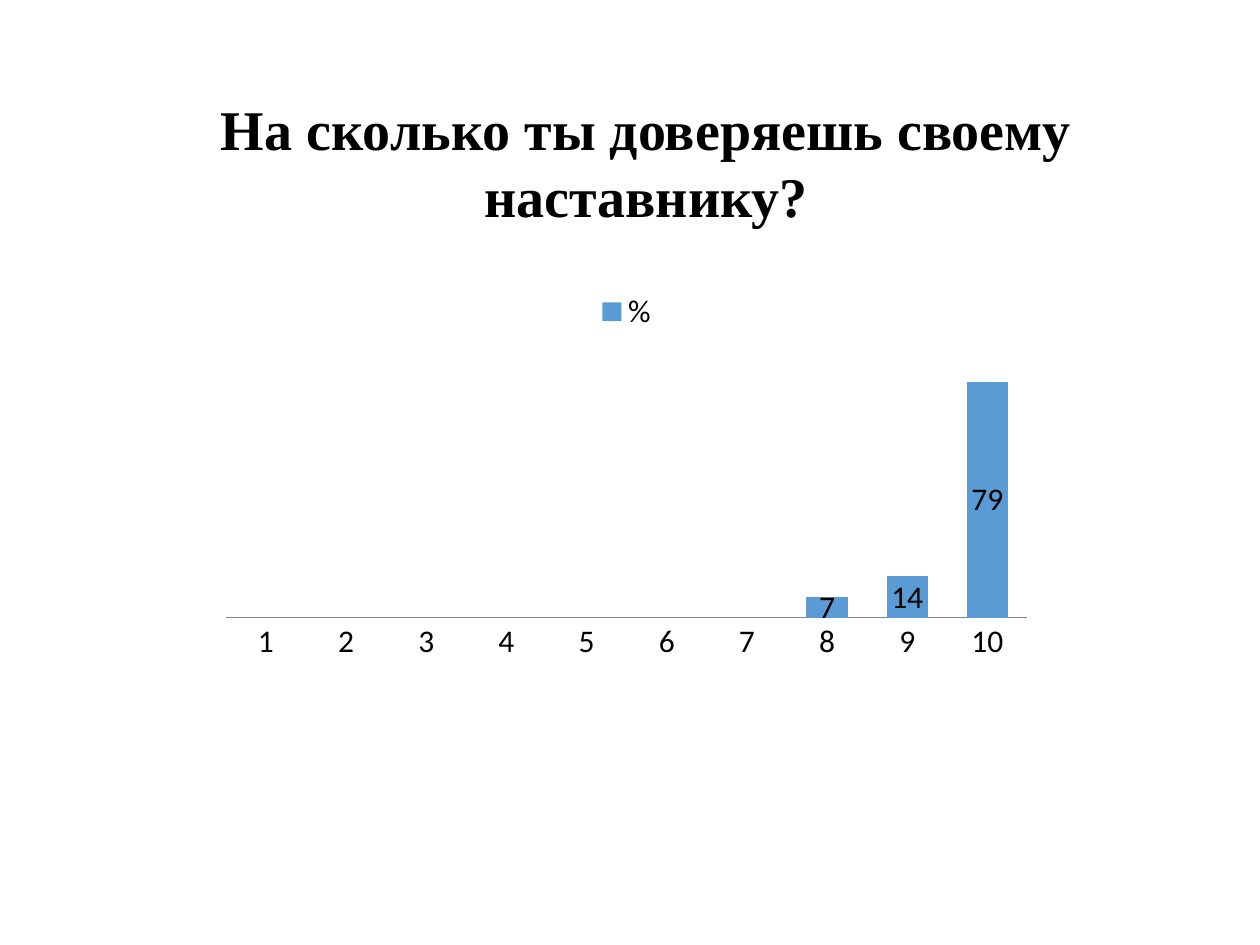
from dataclasses import dataclass

import lxml.etree
import pptx
import pptx.chart.data
import pptx.dml.color
import pptx.enum.chart
import pptx.enum.text
import pptx.oxml
import pptx.oxml.ns
import pptx.util

Pt = pptx.util.Pt


@dataclass(frozen=True)
class Theme:
    text: str = "000000"
    bar: str = "5B9BD5"
    axis: str = "878787"
    title_font: str = "Times New Roman"
    chart_font: str = "Calibri"
    title_size: float = 32
    chart_size: float = 18


@dataclass(frozen=True)
class Box:
    left: float
    top: float
    width: float
    height: float

    def lengths(self):
        return tuple(Pt(value) for value in (self.left, self.top, self.width, self.height))


THEME = Theme()
TITLE_BOX = Box(47.5, 49.7, 643.7, 85)
CHART_BOX = Box(118, 158.4, 480.2, 292.3)
PLOT_AREA = {"x": 0.023, "y": 0.14, "w": 0.954, "h": 0.526}
TRUST_SHARES = [None] * 7 + [7, 14, 79]


def color(value: str):
    return pptx.dml.color.RGBColor.from_string(value)


def format_font(font, *, name: str, size: float, bold: bool = False):
    font.name = name
    font.size = Pt(size)
    font.bold = bold
    font.color.rgb = color(THEME.text)


def write_text(shape, text: str, *, alignment, **font_format):
    frame = shape.text_frame
    frame.word_wrap = True
    frame.text = text
    paragraph = frame.paragraphs[0]
    paragraph.alignment = alignment
    format_font(paragraph.runs[0].font, **font_format)


def set_plot_layout(chart, area: dict):
    """Fix the inner plot area as fractions of the chart."""
    plot_area = chart._chartSpace.chart.plotArea
    for layout in plot_area.findall(pptx.oxml.ns.qn("c:layout")):
        plot_area.remove(layout)
    layout = lxml.etree.Element(pptx.oxml.ns.qn("c:layout"))
    manual = lxml.etree.SubElement(layout, pptx.oxml.ns.qn("c:manualLayout"))
    settings = {"layoutTarget": "inner", "xMode": "edge", "yMode": "edge", **area}
    for tag, value in settings.items():
        element = lxml.etree.SubElement(manual, pptx.oxml.ns.qn(f"c:{tag}"))
        element.set("val", str(value))
    plot_area.insert(0, layout)


def add_trust_chart(slide, box: Box):
    data = pptx.chart.data.CategoryChartData()
    data.categories = [str(score) for score in range(1, 11)]
    data.add_series("%", TRUST_SHARES)
    chart = slide.shapes.add_chart(
        pptx.enum.chart.XL_CHART_TYPE.COLUMN_STACKED, *box.lengths(), data
    ).chart
    format_font(chart.font, name=THEME.chart_font, size=THEME.chart_size)
    chart.has_title = False

    # Legend
    chart.has_legend = True
    chart.legend.position = pptx.enum.chart.XL_LEGEND_POSITION.TOP
    chart.legend.include_in_layout = False

    # Axes
    chart.category_axis.major_tick_mark = pptx.enum.chart.XL_TICK_MARK.NONE
    chart.category_axis.format.line.color.rgb = color(THEME.axis)
    chart.category_axis.format.line.width = Pt(0.75)
    chart.value_axis.visible = False
    chart.value_axis.has_major_gridlines = False
    chart.value_axis.minimum_scale = 0
    chart.value_axis.maximum_scale = 90

    # Columns and their values
    plot = chart.plots[0]
    plot.gap_width = 95
    plot.overlap = 100
    plot.vary_by_categories = False
    series = plot.series[0]
    series.format.fill.solid()
    series.format.fill.fore_color.rgb = color(THEME.bar)
    labels = series.data_labels
    labels.show_value = True
    labels.position = pptx.enum.chart.XL_LABEL_POSITION.CENTER
    format_font(labels.font, name=THEME.chart_font, size=THEME.chart_size)
    set_plot_layout(chart, PLOT_AREA)


def main():
    presentation = pptx.Presentation()
    presentation.slide_width, presentation.slide_height = Pt(720), Pt(540)
    slide = presentation.slides.add_slide(presentation.slide_layouts[5])

    # Title
    title = slide.shapes.title
    title.left, title.top, title.width, title.height = TITLE_BOX.lengths()
    write_text(
        title,
        "На сколько ты доверяешь своему наставнику?",
        alignment=pptx.enum.text.PP_ALIGN.CENTER,
        name=THEME.title_font,
        size=THEME.title_size,
        bold=True,
    )

    # Chart
    add_trust_chart(slide, CHART_BOX)
    presentation.save("out.pptx")


if __name__ == "__main__":
    main()
